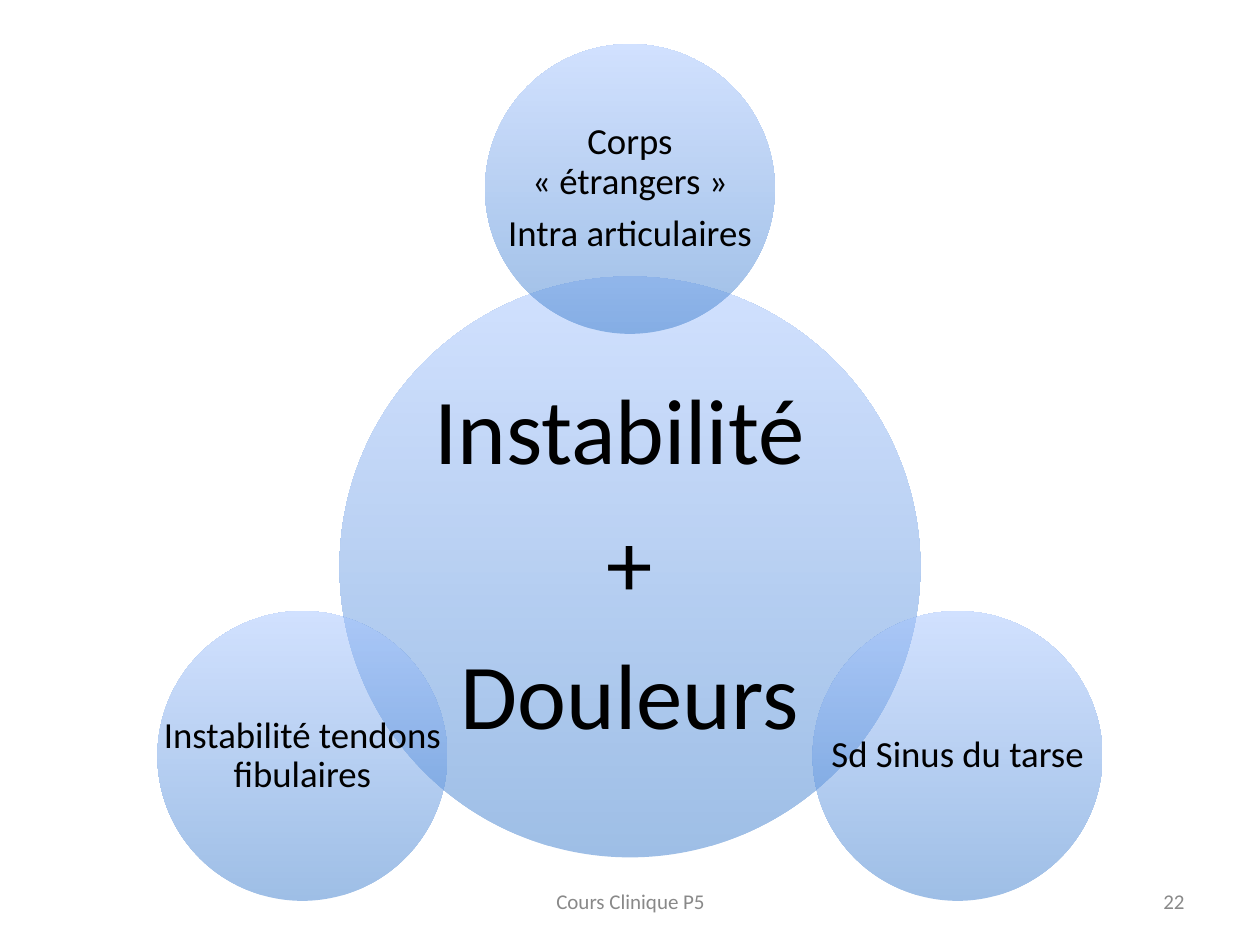
from dataclasses import dataclass

from lxml import etree
from pptx import Presentation
from pptx.dml.color import RGBColor
from pptx.enum.shapes import MSO_SHAPE
from pptx.enum.text import MSO_ANCHOR, PP_ALIGN
from pptx.oxml.ns import qn
from pptx.util import Inches, Pt

OVAL = MSO_SHAPE.OVAL
MIDDLE = MSO_ANCHOR.MIDDLE
CENTER, RIGHT = PP_ALIGN.CENTER, PP_ALIGN.RIGHT
FONT = "Calibri"
GRADIENT = ("3F7FCE", "A4C4FF")
ALPHA = "50000"
LINE_SPACING, SPACE_AFTER = 0.9, 0.35


@dataclass
class Circle:
    cx: float
    cy: float
    diameter: float
    lines: list[str]
    size: int
    inset: float


@dataclass
class Footer:
    left: float
    width: float
    text: str
    align: PP_ALIGN


CIRCLES = [
    Circle(5, 4.5, 4.61, ["Instabilité ", "+", "Douleurs"], 53, 0.07),
    Circle(5, 1.5, 2.3, ["Corps «\u00a0étrangers\u00a0»", "Intra articulaires"], 21, 0.03),
    Circle(7.6, 6, 2.3, ["Sd Sinus du tarse"], 21, 0.03),
    Circle(2.4, 6, 2.3, ["Instabilité tendons fibulaires"], 21, 0.03),
]
FOOTERS = [
    Footer(7.17, 2.33, "22", RIGHT),
    Footer(3.42, 3.17, "Cours Clinique P5", CENTER),
]


def rgb(value: str) -> RGBColor:
    return RGBColor.from_string(value)


def add_text(s, box: tuple, lines: list[str], size: int, color: str, align: PP_ALIGN):
    tf = s.shapes.add_textbox(*box).text_frame
    tf.text = "\n".join(lines)
    tf.word_wrap = True
    tf.vertical_anchor = MIDDLE
    for p in tf.paragraphs:
        p.alignment = align
        for r in p.runs:
            r.font.name = FONT
            r.font.size = Pt(size)
            r.font.color.rgb = rgb(color)
    return tf


def add_circle(s, c: Circle) -> None:
    left, top = c.cx - c.diameter / 2, c.cy - c.diameter / 2
    box = tuple(Inches(v) for v in (left, top, c.diameter, c.diameter))
    sp = s.shapes.add_shape(OVAL, *box)
    sp.shadow.inherit = False
    sp.line.fill.background()
    sp.fill.gradient()
    sp.fill.gradient_angle = 90
    for stop, color, position in zip(sp.fill.gradient_stops, GRADIENT, (0, 1)):
        stop.color.rgb = rgb(color)
        stop.position = position
    for clr in sp.element.spPr.iter(qn("a:srgbClr")):
        etree.SubElement(clr, qn("a:alpha"), val=ALPHA)

    tf = add_text(s, box, c.lines, c.size, "000000", CENTER)
    tf.margin_left = tf.margin_right = Inches(c.inset)
    tf.margin_top = tf.margin_bottom = Inches(c.inset)
    for p in tf.paragraphs:
        p.line_spacing = LINE_SPACING
        p.space_after = Pt(c.size * SPACE_AFTER)


def add_footer(s, f: Footer) -> None:
    box = (Inches(f.left), Inches(6.95), Inches(f.width), Inches(0.4))
    add_text(s, box, [f.text], 12, "898989", f.align)


def main() -> None:
    prs = Presentation()
    prs.slide_width, prs.slide_height = Inches(10), Inches(7.5)
    s = prs.slides.add_slide(prs.slide_layouts[6])
    for circle in CIRCLES:
        add_circle(s, circle)
    for footer in FOOTERS:
        add_footer(s, footer)
    prs.save("out.pptx")


if __name__ == "__main__":
    main()
